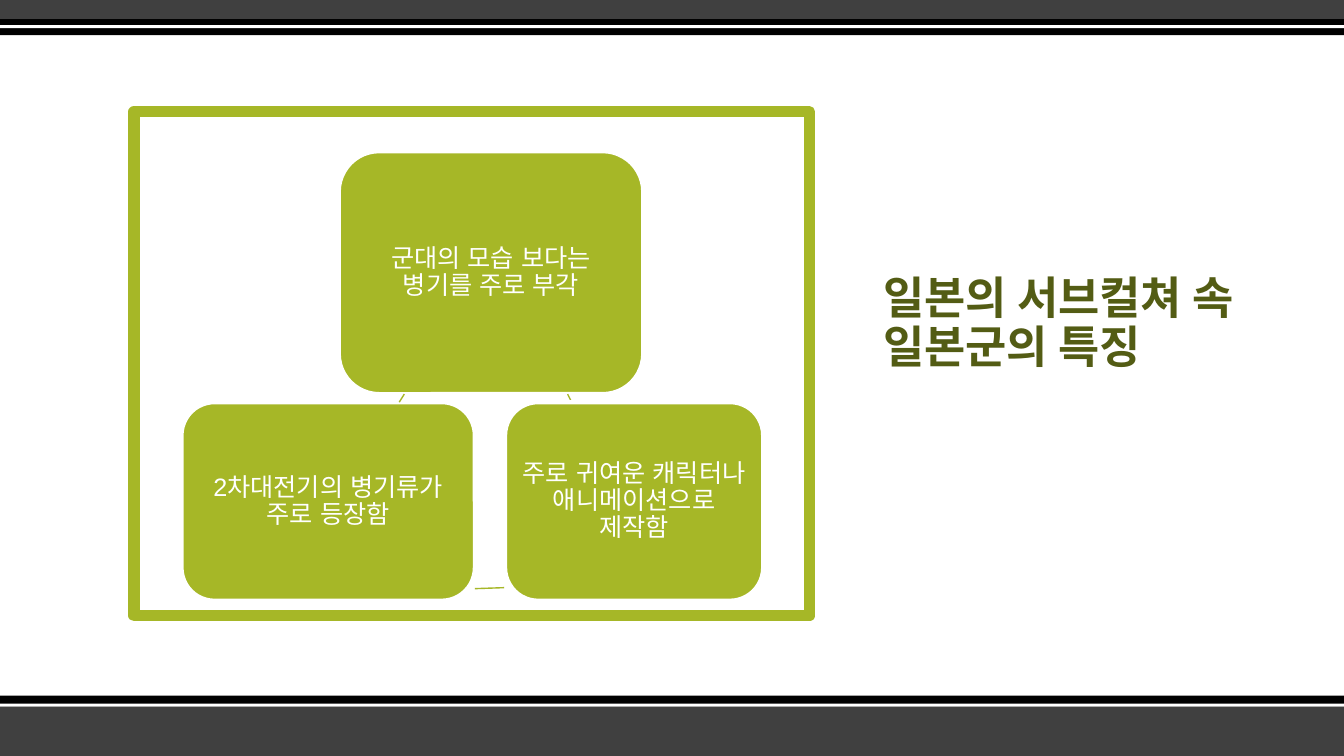
from pptx import Presentation, util as u
from pptx.dml.color import RGBColor
from pptx.enum import shapes, text
from pptx.oxml.ns import qn
from lxml import etree

WIDTH, HEIGHT = 13.33, 7.5
COLORS = {"green": "A6B727", "olive": "535C14", "gray": "404040",
          "black": "000000", "white": "FFFFFF"}

# Bands across the whole slide: top, height, colour
BANDS = [(7, 0.5, "gray"), (6.9, 0.11, "black"), (6.98, 0.03, "white"),
         (0, 0.19, "gray"), (0.19, 0.16, "black"), (0.25, 0.03, "white")]

# Cycle steps: left, top, width, height, wording
LOWER_TOP, LOWER_HEIGHT = 3.99, 1.97
STEPS = [
    (3.36, 1.5, 3.02, 2.41, "군대의 모습 보다는 병기를 주로 부각"),
    (5.01, LOWER_TOP, 2.56, LOWER_HEIGHT, "주로 귀여운 캐릭터나 애니메이션으로 제작함"),
    (1.8, LOWER_TOP, 2.91, LOWER_HEIGHT, "2차대전기의 병기류가 주로 등장함"),
]

# Visible pieces of the cycle between the steps
LINKS = [(5.63, 3.91, 5.67, 3.99), (5, 5.83, 4.71, 5.84), (3.96, 3.99, 4.01, 3.91)]


def color(name):
    return RGBColor.from_string(COLORS[name])


def inches(*lengths):
    return [u.Inches(length) for length in lengths]


def add_box(slide, kind, place, fill=None, line=None, line_width=0):
    box = slide.shapes.add_shape(kind, *inches(*place))
    box.shadow.inherit = False
    if fill:
        box.fill.solid()
        box.fill.fore_color.rgb = color(fill)
    else:
        box.fill.background()
    if line:
        box.line.color.rgb = color(line)
        box.line.width = u.Pt(line_width)
    else:
        box.line.fill.background()
    return box


def write(frame, wording, size, font, ink, align, bold=False):
    frame.text = wording
    frame.word_wrap = True
    paragraph = frame.paragraphs[0]
    paragraph.alignment = align
    paragraph.line_spacing = 0.9
    run = paragraph.runs[0]
    run.font.size, run.font.bold, run.font.name = u.Pt(size), bold, font
    run.font.color.rgb = color(ink)
    # Hangul takes its font from the East Asian setting
    latin = run.font._element.find(qn("a:latin"))
    east_asian = etree.Element(qn("a:ea"), typeface=font)
    latin.addnext(east_asian)


def add_step(slide, left, top, width, height, wording):
    step = add_box(slide, shapes.MSO_SHAPE.ROUNDED_RECTANGLE,
                   (left, top, width, height), "green", "white", 3)
    frame = step.text_frame
    frame.margin_left = frame.margin_right = u.Inches(0.07)
    frame.margin_top = frame.margin_bottom = u.Inches(0.07)
    frame.vertical_anchor = text.MSO_ANCHOR.MIDDLE
    write(frame, wording, 18, "Arial", "white", text.PP_ALIGN.CENTER)


def add_link(slide, ends):
    link = slide.shapes.add_connector(shapes.MSO_CONNECTOR.STRAIGHT, *inches(*ends))
    link.line.color.rgb = color("green")
    link.line.width = u.Pt(1)
    etree.SubElement(link._element.spPr, qn("a:effectLst"))


def place_title(slide, wording):
    title = slide.shapes.title
    title.left, title.top, title.width, title.height = inches(8.66, 1.5, 3.83, 2.25)
    title.text_frame.vertical_anchor = text.MSO_ANCHOR.BOTTOM
    write(title.text_frame, wording, 32, "Noto Sans CJK KR", "olive",
          text.PP_ALIGN.LEFT, bold=True)


def main():
    deck = Presentation()
    deck.slide_width, deck.slide_height = inches(WIDTH, HEIGHT)
    slide = deck.slides.add_slide(deck.slide_layouts[5])

    # Bands and frame
    for top, height, fill in BANDS:
        add_box(slide, shapes.MSO_SHAPE.RECTANGLE, (0, top, WIDTH, height), fill)
    add_box(slide, shapes.MSO_SHAPE.RECTANGLE, (1.33, 1.11, 6.7, 5),
            line="green", line_width=8)

    place_title(slide, "일본의 서브컬쳐 속 일본군의 특징")

    # Cycle of three steps
    for step, link in zip(STEPS, LINKS):
        add_step(slide, *step)
        add_link(slide, link)

    deck.save("out.pptx")


if __name__ == "__main__":
    main()
